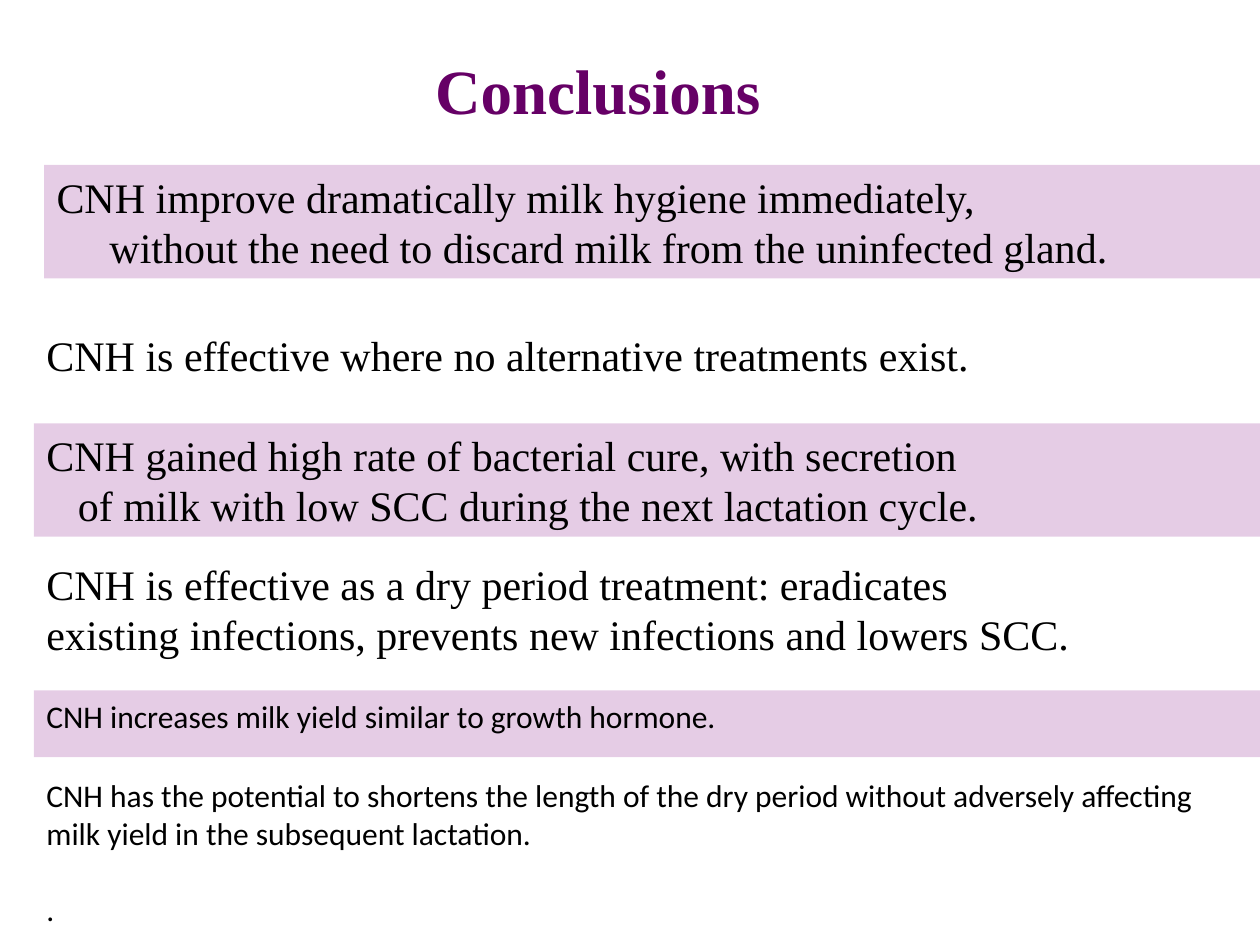
from lxml.etree import SubElement
from pptx import Presentation
from pptx.dml.color import RGBColor
from pptx.enum.shapes import MSO_SHAPE
from pptx.enum.text import MSO_ANCHOR, PP_ALIGN
from pptx.oxml.ns import qn
from pptx.util import Emu, Inches, Pt

PLUM = RGBColor(0x66, 0x00, 0x66)
PURPLE = RGBColor(0x80, 0x00, 0x80)
BLACK = RGBColor(0x00, 0x00, 0x00)
SERIF, SANS = "Times New Roman", "Calibri"
BAND_OPACITY = 20  # percent
LEFT = 0.27

TITLE = "Conclusions"
# Each conclusion: paragraphs, top, height, then what differs from the defaults.
# "\v" breaks a line; hang indents the lines after the first.
CONCLUSIONS = [
    (["CNH improve dramatically milk hygiene immediately,\v"
      "without the need to discard milk from the uninfected gland."],
     1.31, 0.9, dict(left=0.35, band=True, hang=0.42)),
    (["CNH is effective where no alternative treatments exist."],
     2.57, 0.5, dict(align=PP_ALIGN.JUSTIFY)),
    (["CNH gained high rate of bacterial cure, with secretion\v"
      "of milk with low SCC during the next lactation cycle."],
     3.36, 0.9, dict(band=True, hang=0.25)),
    (["CNH is effective as a dry period treatment: eradicates\v"
      "existing infections, prevents new infections and lowers SCC."],
     4.38, 0.9, {}),
    (["CNH increases milk yield similar to growth hormone."],
     5.48, 0.53, dict(band=True, font=SANS, size=18)),
    (["CNH has the potential to shortens the length of the dry period "
      "without adversely affecting milk yield in the subsequent lactation.",
      "."],
     6.11, 1.39, dict(font=SANS, size=18, gap=22)),
]


def write(frame, paragraphs, font=SERIF, size=24, color=BLACK, bold=False,
          align=PP_ALIGN.LEFT, anchor=MSO_ANCHOR.TOP, hang=0, gap=0):
    """Fill a text frame; gap is the space in points between paragraphs."""
    frame.word_wrap = True
    frame.vertical_anchor = anchor
    for index, text in enumerate(paragraphs):
        paragraph = frame.add_paragraph() if index else frame.paragraphs[0]
        paragraph.text = text
        paragraph.alignment = align
        paragraph.space_before = Pt(gap if index else 0)
        paragraph.font.name = font
        paragraph.font.size = Pt(size)
        paragraph.font.bold = bold
        paragraph.font.color.rgb = color
        for run in paragraph.runs:
            run.font.name = font
        if hang:
            properties = paragraph._p.get_or_add_pPr()
            properties.set("marL", str(Inches(hang)))
            properties.set("indent", str(-Inches(hang)))


def add_conclusion(slide, paragraphs, top, height, left=LEFT, band=False, **style):
    """Add one conclusion, on a pale band that reaches the right edge if asked."""
    width = Emu(prs.slide_width - Inches(left))
    place = (Inches(left), Inches(top), width, Inches(height))
    if band:
        box = slide.shapes.add_shape(MSO_SHAPE.RECTANGLE, *place)
        box.shadow.inherit = False
        box.line.fill.background()
        box.fill.solid()
        box.fill.fore_color.rgb = PURPLE
        color = box.fill._xPr.find(qn("a:solidFill"))[0]
        SubElement(color, qn("a:alpha")).set("val", str(BAND_OPACITY * 1000))
    else:
        box = slide.shapes.add_textbox(*place)
    write(box.text_frame, paragraphs, **style)


prs = Presentation()
prs.slide_width, prs.slide_height = Inches(10), Inches(7.5)
slide = prs.slides.add_slide(prs.slide_layouts[5])

# Title
title = slide.shapes.title
title.left, title.top = Inches(3.03), Inches(0.36)
title.width, title.height = Inches(3.43), Inches(0.7)
write(title.text_frame, [TITLE], size=36, color=PLUM, bold=True,
      align=PP_ALIGN.CENTER, anchor=MSO_ANCHOR.MIDDLE)

# Conclusions, alternating banded and plain
for paragraphs, top, height, options in CONCLUSIONS:
    add_conclusion(slide, paragraphs, top, height, **options)

prs.save("out.pptx")
